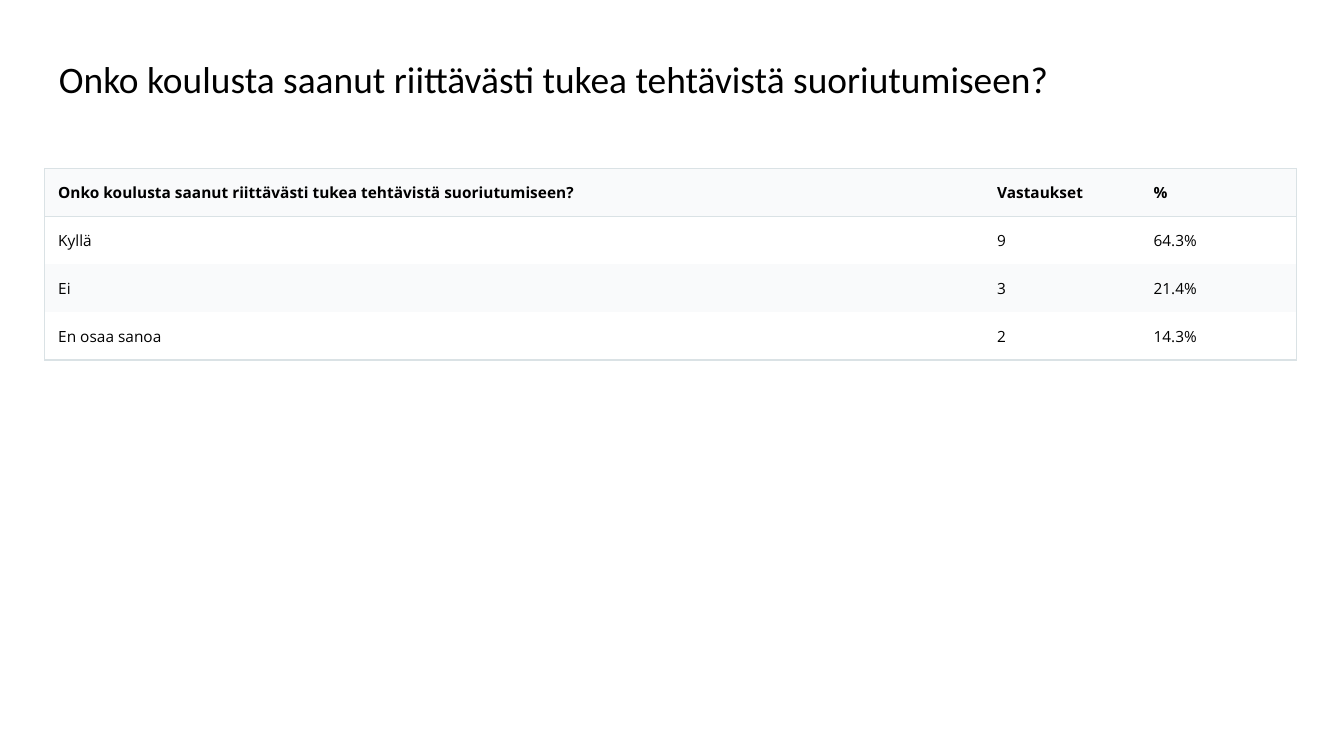
import pptx
import pptx.dml.color
import pptx.enum.text
import pptx.oxml
import pptx.oxml.ns
import pptx.util

Pt = pptx.util.Pt
BLACK = pptx.dml.color.RGBColor(0x00, 0x00, 0x00)
WHITE = pptx.dml.color.RGBColor(0xFF, 0xFF, 0xFF)
PALE = pptx.dml.color.RGBColor(0xF9, 0xFA, 0xFB)
BORDER = pptx.dml.color.RGBColor(0xDA, 0xE2, 0xE5)

INSET = Pt(9.6)
QUESTION = "Onko koulusta saanut riittävästi tukea tehtävistä suoriutumiseen?"
ROWS = [
    (QUESTION, "Vastaukset", "%"),
    ("Kyllä", "9", "64.3%"),
    ("Ei", "3", "21.4%"),
    ("En osaa sanoa", "2", "14.3%"),
]
COLUMN_WIDTHS = (670.6, 111.8, 111.8)
ROW_HEIGHT = 32


def set_insets(target):
    target.margin_left = target.margin_right = INSET
    target.margin_top = target.margin_bottom = INSET


def style_text(tf, font_name, size, bold=False):
    font = tf.paragraphs[0].runs[0].font
    font.name = font_name
    font.size = Pt(size)
    font.bold = bold
    font.color.rgb = BLACK


def add_title(s, text):
    title = s.shapes.title
    title.left, title.top = Pt(32.4), Pt(28.1)
    title.width, title.height = Pt(894.2), Pt(60.5)
    tf = title.text_frame
    tf.text = text
    tf.word_wrap = True
    tf.auto_size = pptx.enum.text.MSO_AUTO_SIZE.NONE
    tf.vertical_anchor = pptx.enum.text.MSO_ANCHOR.MIDDLE
    set_insets(tf)
    p = tf.paragraphs[0]
    p.alignment = pptx.enum.text.PP_ALIGN.LEFT
    p.line_spacing = 0.9
    style_text(tf, "Calibri", 26.7)


def set_borders(cell, sides):
    """Draw the named sides (from L, R, T, B) and clear the others."""
    tc_pr = cell._tc.get_or_add_tcPr()
    for i, side in enumerate("LRTB"):
        fill = f'<a:solidFill><a:srgbClr val="{BORDER}"/></a:solidFill>' if side in sides else "<a:noFill/>"
        line = pptx.oxml.parse_xml(
            f'<a:ln{side} {pptx.oxml.ns.nsdecls("a")} w="{Pt(1)}">{fill}</a:ln{side}>'
        )
        tc_pr.insert(i, line)


def border_sides(row, column):
    """Outer frame plus a line below the header row."""
    last_row, last_column = len(ROWS) - 1, len(COLUMN_WIDTHS) - 1
    sides = {
        "L": column == 0,
        "R": column == last_column,
        "T": row in (0, 1),
        "B": row in (0, last_row),
    }
    return [side for side, drawn in sides.items() if drawn]


def add_answer_table(s):
    frame = s.shapes.add_table(
        len(ROWS), len(COLUMN_WIDTHS), Pt(32), Pt(120.4),
        Pt(sum(COLUMN_WIDTHS)), Pt(ROW_HEIGHT * len(ROWS)),
    )
    table = frame.table
    for column, width in zip(table.columns, COLUMN_WIDTHS):
        column.width = Pt(width)
    for i, values in enumerate(ROWS):
        table.rows[i].height = Pt(ROW_HEIGHT)
        for j, value in enumerate(values):
            cell = table.cell(i, j)
            cell.text_frame.text = value
            set_insets(cell)
            style_text(cell.text_frame, "Open Sans", 11, bold=i == 0)
            cell.fill.solid()
            cell.fill.fore_color.rgb = WHITE if i % 2 else PALE
            set_borders(cell, border_sides(i, j))


def main():
    prs = pptx.Presentation()
    prs.slide_width, prs.slide_height = Pt(960), Pt(540)
    s = prs.slides.add_slide(prs.slide_layouts[5])
    add_title(s, QUESTION)
    add_answer_table(s)
    prs.save("out.pptx")


if __name__ == "__main__":
    main()
